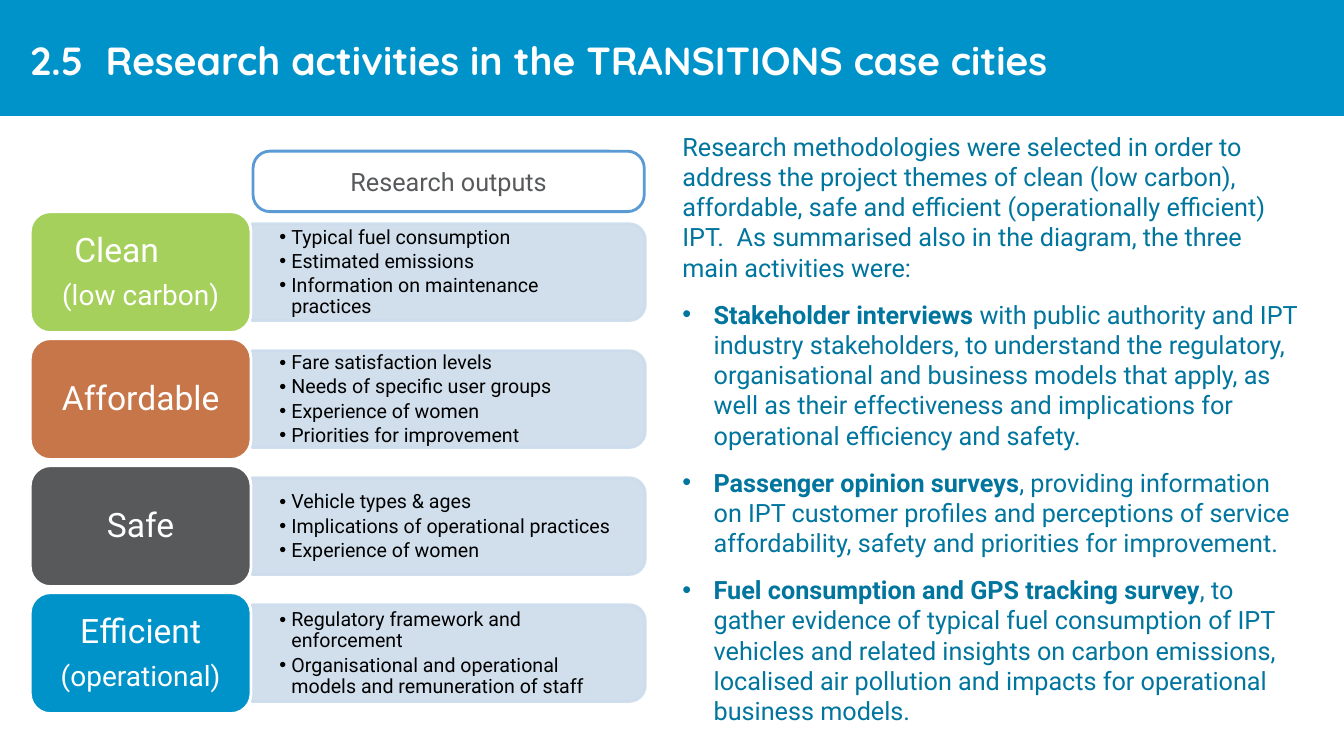
from lxml import etree
from pptx import Presentation
from pptx.dml.color import RGBColor as RGB
from pptx.enum.shapes import MSO_SHAPE as Kind
from pptx.enum.text import MSO_ANCHOR as Anchor, MSO_AUTO_SIZE as Fit, PP_ALIGN as Align
from pptx.oxml.ns import qn
from pptx.util import Inches, Pt

HUE = {"blue": "0093CA", "white": "FFFFFF", "teal": "00759E", "pale": "CCDCEC",
       "green": "A5D05B", "rust": "C77649", "grey": "58595B", "edge": "5B9BD5",
       "black": "000000"}

deck = Presentation()
deck.slide_width, deck.slide_height = Inches(13.33), Inches(7.5)
slide = deck.slides.add_slide(deck.slide_layouts[5])
shapes = slide.shapes


def write(frame, *runs, size=18, hue="white", face="Roboto", align=Align.LEFT,
          after=0, lead=1.0, left=0, bullet=False, bold=False):
    para = frame.paragraphs[0] if not frame.text else frame.add_paragraph()
    props = para._p.get_or_add_pPr()
    props.set("marL", str(Inches(left)))
    props.set("indent", str(-Inches(left) if bullet else 0))
    if bullet:
        etree.SubElement(props, qn("a:buFont")).set("typeface", "Arial")
        etree.SubElement(props, qn("a:buChar")).set("char", "•")
    para.alignment, para.line_spacing = align, lead
    para.space_before, para.space_after = Pt(0), Pt(after)
    for num, words in enumerate(runs):
        run = para.add_run()
        run.text = words
        font = run.font
        font.name, font.size = face, Pt(size)
        font.bold = bold or (len(runs) > 1 and num == 0)
        font.color.rgb = RGB.from_string(HUE[hue])


def draw(kind, x, y, w, h, fill, line=None, alpha=None):
    shape = shapes.add_shape(kind, Inches(x), Inches(y), Inches(w), Inches(h))
    shape.shadow.inherit = False
    shape.fill.solid()
    shape.fill.fore_color.rgb = RGB.from_string(HUE[fill])
    if line:
        shape.line.color.rgb = RGB.from_string(HUE[line])
        shape.line.width = Pt(2)
    else:
        shape.line.fill.background()
    if alpha:
        for tone in shape._element.spPr.iter(qn("a:srgbClr")):
            etree.SubElement(tone, qn("a:alpha")).set("val", str(alpha * 1000))
    shape.text_frame.word_wrap = True
    shape.text_frame.vertical_anchor = Anchor.MIDDLE
    return shape


band = draw(Kind.RECTANGLE, 0, 0, 13.33, 1.15, "blue")
shapes._spTree.insert(2, band._element)

title = shapes.title
title.left, title.top = Inches(0.3), Inches(0.28)
title.width, title.height = Inches(13.03), Inches(0.64)
frame = title.text_frame
frame.auto_size, frame.word_wrap = Fit.NONE, True
frame.vertical_anchor = Anchor.TOP
frame.margin_left, frame.margin_right = 0, Inches(0.16)
frame.margin_top = frame.margin_bottom = Inches(0.08)
write(frame, "2.5  Research activities in the TRANSITIONS case cities",
      size=28, face="Quicksand", bold=True)

body = draw(Kind.RECTANGLE, 6.67, 1.2, 6.36, 5.88, "white", alpha=76).text_frame
body.vertical_anchor = Anchor.TOP
body.margin_left = body.margin_right = Inches(0.1)
body.margin_top = body.margin_bottom = Inches(0.1)
write(body, "Research methodologies were selected in order to address the project themes "
      "of clean (low carbon), affordable, safe and efficient (operationally efficient) "
      "IPT.  As summarised also in the diagram, the three main activities were:",
      hue="teal", after=12)
tasks = [
    ("Stakeholder interviews",
     " with public authority and IPT industry stakeholders, to understand the regulatory, "
     "organisational and business models that apply, as well as their effectiveness and "
     "implications for operational efficiency and safety."),
    ("Passenger opinion surveys",
     ", providing information on IPT customer profiles and perceptions of service "
     "affordability, safety and priorities for improvement."),
    ("Fuel consumption and GPS tracking survey",
     ", to gather evidence of typical fuel consumption of IPT vehicles and related insights "
     "on carbon emissions, localised air pollution and impacts for operational business "
     "models."),
]
for task in tasks:
    write(body, *task, hue="teal", after=12, left=0.31, bullet=True)

themes = [
    ("Clean", "(low carbon)", "green",
     ["Typical fuel consumption", "Estimated emissions",
      "Information on maintenance practices"]),
    ("Affordable", None, "rust",
     ["Fare satisfaction levels", "Needs of specific user groups",
      "Experience of women", "Priorities for improvement"]),
    ("Safe", None, "grey",
     ["Vehicle types & ages", "Implications of operational practices",
      "Experience of women"]),
    ("Efficient", "(operational)", "blue",
     ["Regulatory framework and enforcement",
      "Organisational and operational models and remuneration of staff"]),
]
for row, (name, note, hue, items) in enumerate(themes):
    top = 2.1 + 1.26 * row
    panel = draw(Kind.ROUND_2_SAME_RECTANGLE, 3.97, top - 1.35, 0.96, 3.9,
                 "pale", "pale", 90)
    panel.rotation = 90

    notes = shapes.add_textbox(Inches(2.5), Inches(top + 0.17),
                               Inches(3.86), Inches(0.87)).text_frame
    notes.word_wrap = True
    notes.vertical_anchor = Anchor.MIDDLE
    notes.margin_left = notes.margin_right = Inches(0.27)
    notes.margin_top = notes.margin_bottom = Inches(0.14)
    for item in items:
        write(notes, item, size=14, hue="black", after=2.1, lead=0.9,
              left=0.12, bullet=True)

    label = draw(Kind.ROUNDED_RECTANGLE, 0.3, top, 2.19, 1.2, hue, "white").text_frame
    shift = name == "Clean"
    write(label, name, size=24, align=Align.LEFT if shift else Align.CENTER,
          left=0.28 if shift else 0, after=8.4, lead=0.9)
    if note:
        write(label, note, size=20, align=Align.CENTER, after=7, lead=0.9)

head = draw(Kind.ROUNDED_RECTANGLE, 2.51, 1.5, 3.88, 0.6, "white", "edge")
head.adjustments[0] = 0.28
write(head.text_frame, "Research outputs", hue="grey", align=Align.CENTER)

deck.save("out.pptx")
